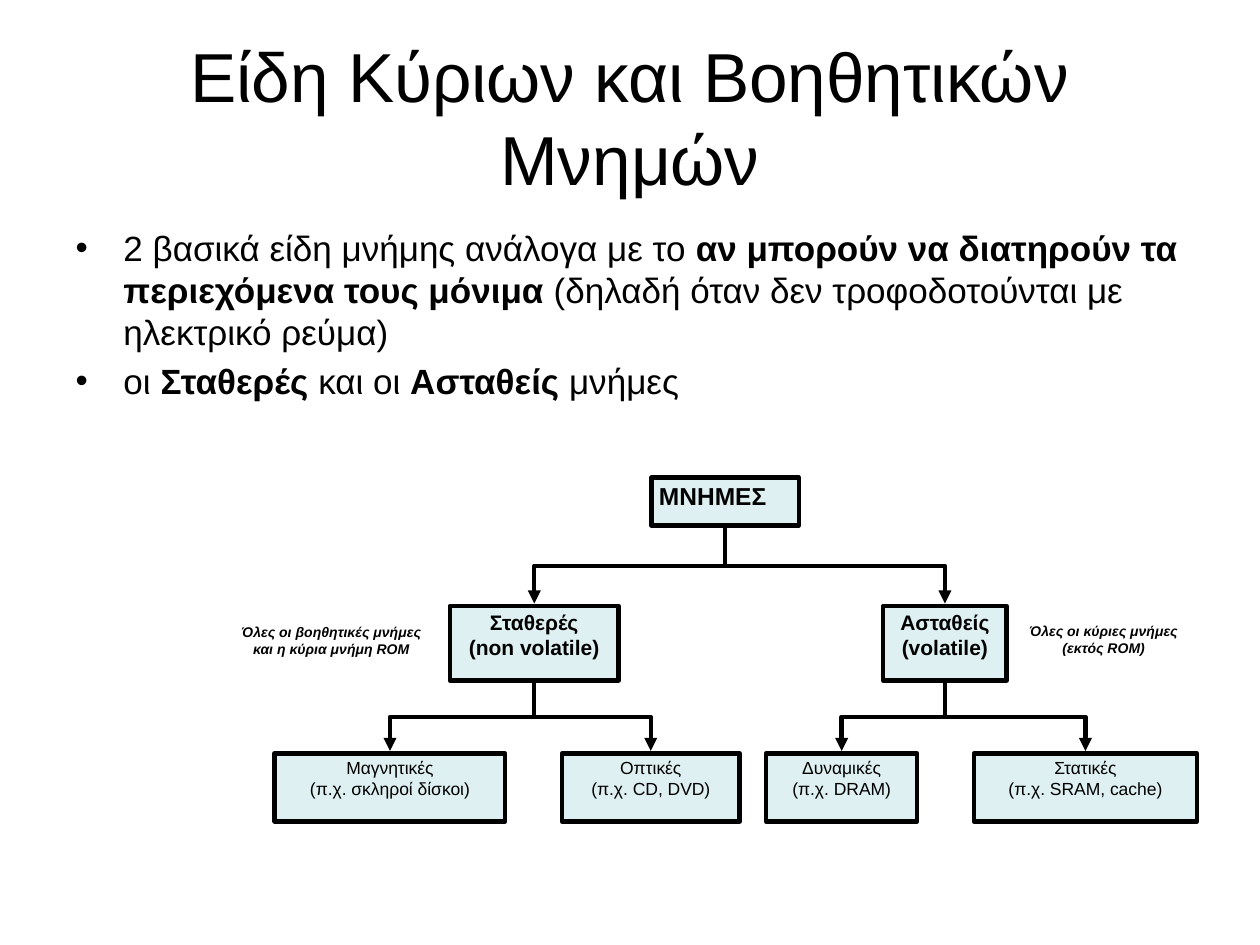
"""Builds a slide on kinds of main and auxiliary memory, with a tree of memory types."""
from dataclasses import dataclass
from typing import Any

from lxml import etree
from pptx import Presentation
from pptx import util as u
from pptx.dml.color import RGBColor
from pptx.enum import shapes, text
from pptx.oxml import ns

INK = RGBColor(0, 0, 0)
NODE_FILL = RGBColor(0xBB, 0xE0, 0xE3)
FONT = "Arial"
COLUMNS, ROWS = 100, 75
CENTER = text.PP_ALIGN.CENTER


def sub(parent, tag, **attributes):
    return etree.SubElement(parent, ns.qn(tag), attributes)


@dataclass
class MemorySlide:
    deck: Any
    slide: Any
    line_width: float = 2.5
    fill_alpha: int = 48
    arrow_gap: float = 0.2

    def x(self, columns):
        return round(self.deck.slide_width * columns / COLUMNS)

    def y(self, rows):
        return round(self.deck.slide_height * rows / ROWS)

    def box(self, left, top, width, height):
        return self.x(left), self.y(top), self.x(width), self.y(height)

    def place(self, holder, *box):
        holder.left, holder.top, holder.width, holder.height = self.box(*box)
        holder.text_frame.auto_size = text.MSO_AUTO_SIZE.NONE
        return holder.text_frame

    def style(self, paragraph, size, bold=False, italic=False, align=None):
        paragraph.alignment = align
        font = paragraph.font
        font.name, font.size = FONT, u.Pt(size)
        font.bold, font.italic = bold, italic
        font.color.rgb = INK

    def title(self, words, box):
        frame = self.place(self.slide.shapes.title, *box)
        frame.text = words
        frame.vertical_anchor = text.MSO_ANCHOR.MIDDLE
        self.style(frame.paragraphs[0], 39.6, align=CENTER)

    def bullets(self, items, box):
        frame = self.place(self.slide.placeholders[1], *box)
        for number, parts in enumerate(items):
            paragraph = frame.add_paragraph() if number else frame.paragraphs[0]
            paragraph.space_before = u.Pt(4 if number else 0)
            properties = paragraph._p.get_or_add_pPr()
            indent = u.Inches(0.38)
            properties.set("marL", str(indent))
            properties.set("indent", str(-indent))
            sub(properties, "a:buChar", char="•")
            self.style(paragraph, 20)
            for words, bold in parts:
                run = paragraph.add_run()
                run.text = words
                if bold:
                    run.font.bold = True

    def lines(self, frame, words, **style):
        frame.word_wrap = True
        frame.vertical_anchor = text.MSO_ANCHOR.TOP
        frame.margin_left = frame.margin_right = u.Inches(0.06)
        frame.margin_top = frame.margin_bottom = u.Inches(0.03)
        frame.text = words
        for paragraph in frame.paragraphs:
            self.style(paragraph, **style)

    def node(self, words, box, **style):
        node = self.slide.shapes.add_shape(shapes.MSO_SHAPE.RECTANGLE, *self.box(*box))
        node.shadow.inherit = False
        node.fill.solid()
        node.fill.fore_color.rgb = NODE_FILL
        color = node._element.spPr.find(ns.qn("a:solidFill"))[0]
        sub(color, "a:alpha", val=str(self.fill_alpha * 1000))
        node.line.color.rgb = INK
        node.line.width = u.Pt(self.line_width)
        self.lines(node.text_frame, words, **style)
        return node

    def note(self, words, box):
        note = self.slide.shapes.add_textbox(*self.box(*box))
        self.lines(note.text_frame, words, size=8, bold=True, italic=True, align=CENTER)

    def branch(self, parent, child):
        gap = self.y(self.arrow_gap)
        start_x = parent.left + parent.width // 2
        end_x = child.left + child.width // 2
        start_y = parent.top + parent.height + gap
        end_y = child.top - gap
        middle_x, middle_y = (start_x + end_x) // 2, (start_y + end_y) // 2
        half_drop, half_span = (end_y - start_y) // 2, abs(end_x - start_x) // 2
        rightward = end_x > start_x
        reach = -half_drop if rightward else half_drop
        arrow = self.slide.shapes.add_connector(
            shapes.MSO_CONNECTOR.ELBOW,
            middle_x - reach, middle_y - half_span,
            middle_x + reach, middle_y + half_span)
        arrow.line.color.rgb = INK
        arrow.line.width = u.Pt(self.line_width)
        properties = arrow._element.spPr
        properties.xfrm.set("rot", str((270 if rightward else 90) * 60000))
        sub(properties.find(ns.qn("a:ln")), "a:tailEnd", type="triangle")
        sub(properties, "a:effectLst")


def main():
    deck = Presentation()
    deck.slide_width, deck.slide_height = u.Inches(10), u.Inches(7.5)
    page = MemorySlide(deck, deck.slides.add_slide(deck.slide_layouts[1]))
    page.title("Είδη Κύριων και Βοηθητικών Μνημών", (5, 3, 90, 12.5))
    page.bullets([
        [("2 βασικά είδη μνήμης ανάλογα με το ", False),
         ("αν μπορούν να διατηρούν τα περιεχόμενα τους μόνιμα", True),
         (" (δηλαδή όταν δεν τροφοδοτούνται με ηλεκτρικό ρεύμα)", False)],
        [("οι ", False), ("Σταθερές", True), (" και οι ", False),
         ("Ασταθείς", True), (" μνήμες", False)],
    ], (5, 17.5, 90, 49.5))

    families = [
        ("Σταθερές\n(non volatile)", 35.7, 13.4, [
            ("Μαγνητικές\n(π.χ. σκληροί δίσκοι)", 21.8, 18.3),
            ("Οπτικές\n(π.χ. CD, DVD)", 44.6, 14.1)]),
        ("Ασταθείς\n(volatile)", 70.1, 9.8, [
            ("Δυναμικές\n(π.χ. DRAM)", 60.8, 12),
            ("Στατικές\n(π.χ. SRAM, cache)", 77.3, 17.7)]),
    ]
    memories = page.node("ΜΝΗΜΕΣ", (51.7, 37.9, 11.7, 3.8),
                         size=14, bold=True, align=text.PP_ALIGN.LEFT)
    for family_name, left, width, kinds in families:
        family = page.node(family_name, (left, 48.1, width, 5.9),
                           size=12, bold=True, align=CENTER)
        page.branch(memories, family)
        for kind_name, kind_left, kind_width in kinds:
            kind = page.node(kind_name, (kind_left, 59.8, kind_width, 5.4),
                             size=10, align=CENTER)
            page.branch(family, kind)

    page.note("Όλες οι βοηθητικές μνήμες\nκαι η κύρια μνήμη ROM", (16.9, 49.2, 18.8, 4))
    page.note("Όλες οι κύριες μνήμες\n(εκτός ROM)", (79.7, 49.1, 15.8, 4))
    deck.save("out.pptx")


if __name__ == "__main__":
    main()
